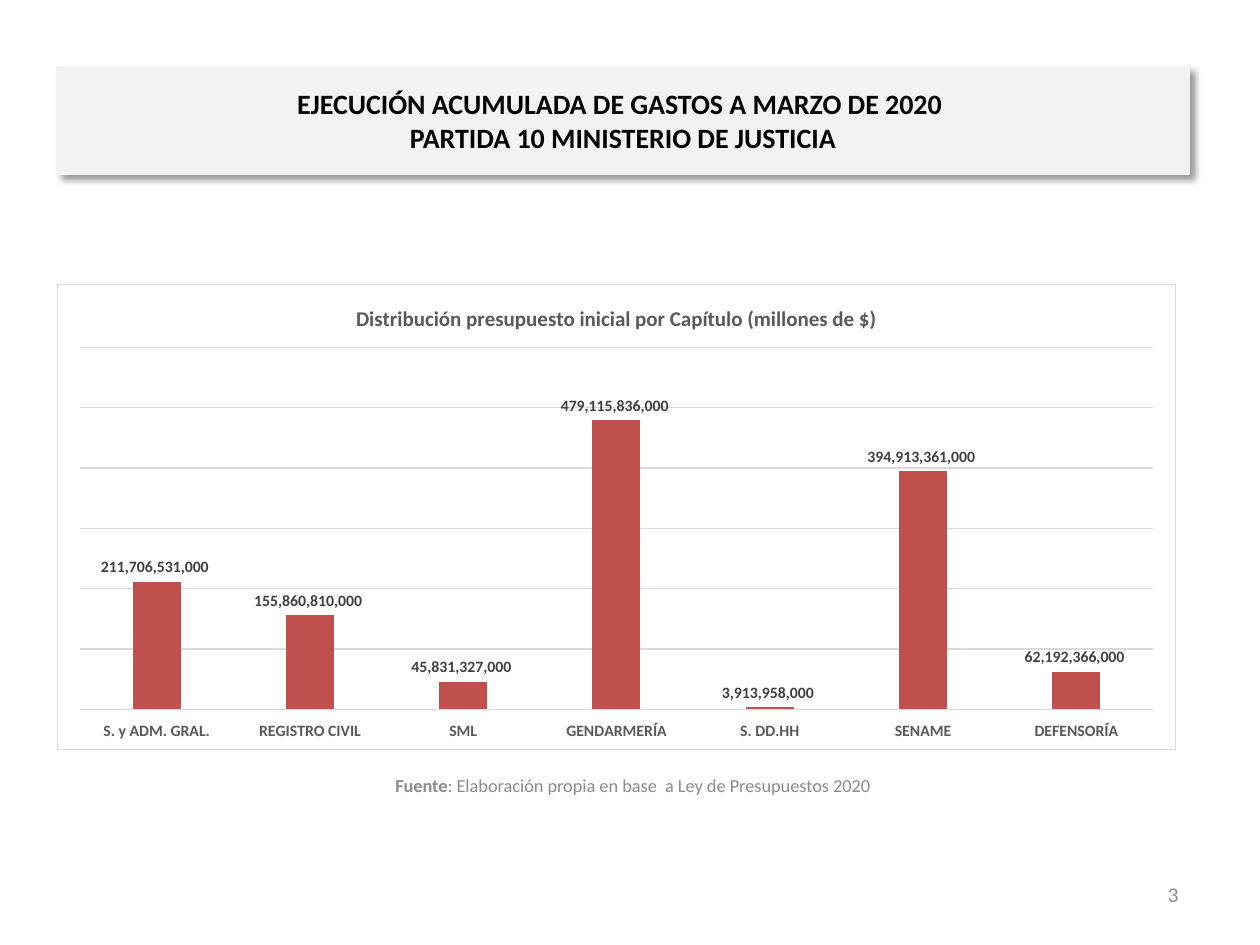
"""Build the slide on initial budget by chapter, Partida 10 Ministerio de Justicia."""
from lxml.etree import fromstring
from pptx import Presentation
from pptx.chart.data import CategoryChartData
from pptx.dml.color import RGBColor
from pptx.enum.chart import XL_CHART_TYPE, XL_LABEL_POSITION, XL_TICK_LABEL_POSITION, XL_TICK_MARK
from pptx.enum.text import MSO_ANCHOR, MSO_AUTO_SIZE, PP_ALIGN
from pptx.oxml.ns import qn
from pptx.util import Emu, Pt

NS = ('xmlns:a="http://schemas.openxmlformats.org/drawingml/2006/main" '
      'xmlns:c="http://schemas.openxmlformats.org/drawingml/2006/chart"')
FMT = "#,##0_ ;[Red]\\-#,##0\\ "
BUDGET = {
    "S. y ADM. GRAL.": 211706531000,
    "REGISTRO CIVIL": 155860810000,
    "SML": 45831327000,
    "GENDARMERÍA": 479115836000,
    "S. DD.HH": 3913958000,
    "SENAME": 394913361000,
    "DEFENSORÍA": 62192366000,
}


def px(*lengths):
    return [Emu(round(n * 914400 / 126)) for n in lengths]


def style(font, size, color, bold=False):
    for name, value in {"name": "Calibri", "size": Pt(size), "bold": bold}.items():
        setattr(font, name, value)
    font.color.rgb = RGBColor.from_string(color)


prs = Presentation()
prs.slide_width, prs.slide_height = px(1260, 945)
s = prs.slides.add_slide(prs.slide_layouts[5])

sp = s.shapes.title
sp.left, sp.top, sp.width, sp.height = px(57, 67, 1132, 107)
sp.fill.solid()
sp.fill.fore_color.rgb = sp.line.color.rgb = RGBColor.from_string("F2F2F2")
sp.line.width = Pt(0.75)
sp.element.spPr.append(fromstring(
    f'<a:effectLst {NS}><a:outerShdw blurRad="50800" dist="38100" dir="2700000" algn="tl" rotWithShape="0">'
    '<a:srgbClr val="000000"><a:alpha val="40000"/></a:srgbClr></a:outerShdw></a:effectLst>'))
tf = sp.text_frame
tf.auto_size = MSO_AUTO_SIZE.NONE
tf.vertical_anchor = MSO_ANCHOR.MIDDLE
p = tf.paragraphs[0]
p.text = "EJECUCIÓN ACUMULADA DE GASTOS A MARZO DE 2020 \vPARTIDA 10 MINISTERIO DE JUSTICIA"
p.alignment = PP_ALIGN.CENTER
for r in p.runs:
    style(r.font, 16, "000000", True)

texts = [
    ((54, 760, 1158, 50), PP_ALIGN.CENTER, 10.5,
     [("Fuente", True), (": Elaboración propia en base  a Ley de Presupuestos 2020", False)]),
    ((897, 869, 294, 50), PP_ALIGN.RIGHT, 12, [("3", False)]),
]
for box, align, size, runs in texts:
    tf = s.shapes.add_textbox(*px(*box)).text_frame
    tf.word_wrap = True
    tf.vertical_anchor = MSO_ANCHOR.MIDDLE
    p = tf.paragraphs[0]
    p.alignment = align
    for text, bold in runs:
        r = p.add_run()
        r.text = text
        style(r.font, size, "8C8C8C", bold)

data = CategoryChartData(number_format=FMT)
data.categories = list(BUDGET)
data.add_series("Presupuesto inicial", list(BUDGET.values()))
chart = s.shapes.add_chart(XL_CHART_TYPE.COLUMN_CLUSTERED, *px(57, 284, 1119, 466), data).chart
style(chart.font, 10, "000000")
chart.has_legend = False
chart.has_title = True
p = chart.chart_title.text_frame.paragraphs[0]
p.text = "Distribución presupuesto inicial por Capítulo (millones de $)"
style(p.runs[0].font, 12, "595959", True)
chart.chart_title.include_in_layout = False
chart.element.find(qn("c:chart")).addnext(fromstring(
    f'<c:spPr {NS}><a:solidFill><a:srgbClr val="FFFFFF"/></a:solidFill>'
    '<a:ln w="9525"><a:solidFill><a:srgbClr val="D9D9D9"/></a:solidFill></a:ln></c:spPr>'))

cat, val = chart.category_axis, chart.value_axis
cat.major_tick_mark = XL_TICK_MARK.NONE
cat.tick_label_position = XL_TICK_LABEL_POSITION.LOW
style(cat.tick_labels.font, 9, "595959", True)
val.visible = False
val.has_major_gridlines = True
for name, value in {"minimum_scale": 0, "maximum_scale": 600e9, "major_unit": 100e9}.items():
    setattr(val, name, value)
for line in (cat.format.line, val.major_gridlines.format.line):
    line.color.rgb = RGBColor.from_string("D9D9D9")
    line.width = Pt(0.75)

plot = chart.plots[0]
for name, value in {"gap_width": 219, "overlap": -27, "vary_by_categories": False,
                    "has_data_labels": True}.items():
    setattr(plot, name, value)
fill = plot.series[0].format.fill
fill.solid()
fill.fore_color.rgb = RGBColor.from_string("C0504D")
labels = plot.data_labels
for name, value in {"show_value": True, "number_format": FMT, "number_format_is_linked": False,
                    "position": XL_LABEL_POSITION.OUTSIDE_END}.items():
    setattr(labels, name, value)
style(labels.font, 9, "404040", True)

prs.save("out.pptx")
